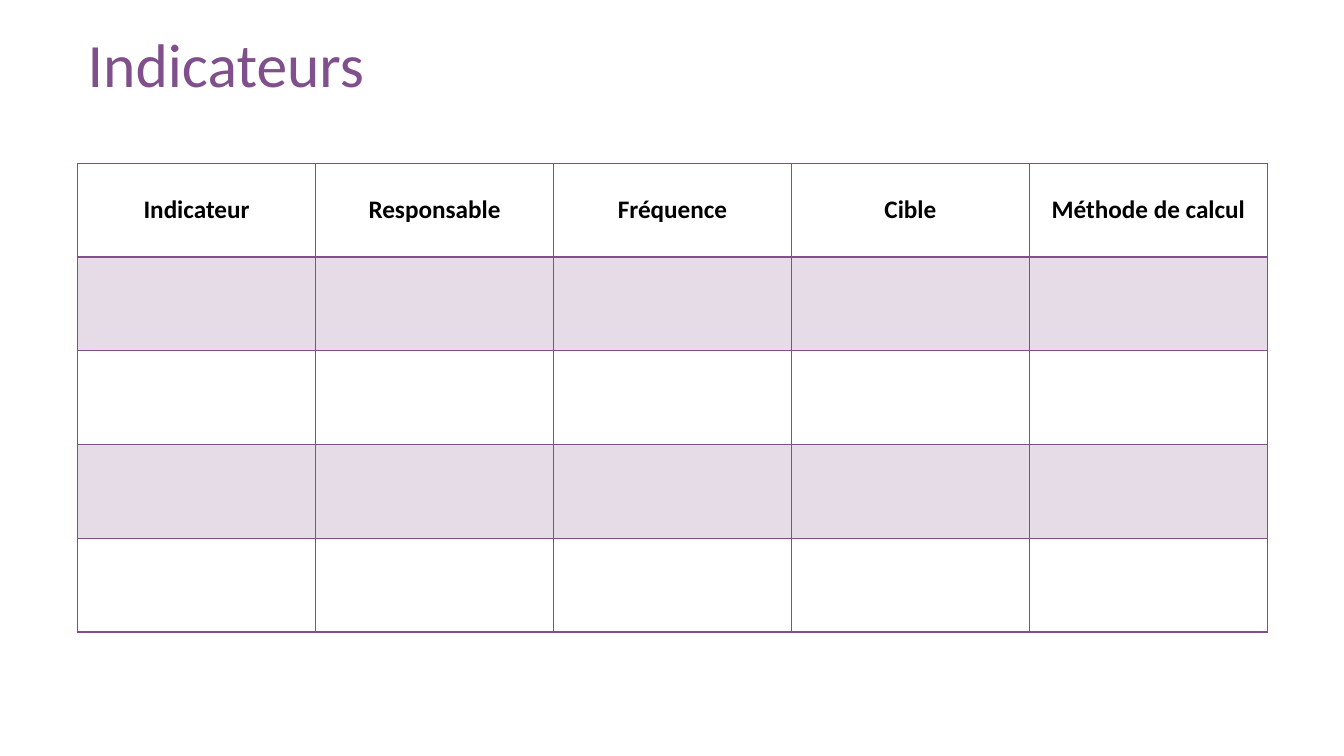
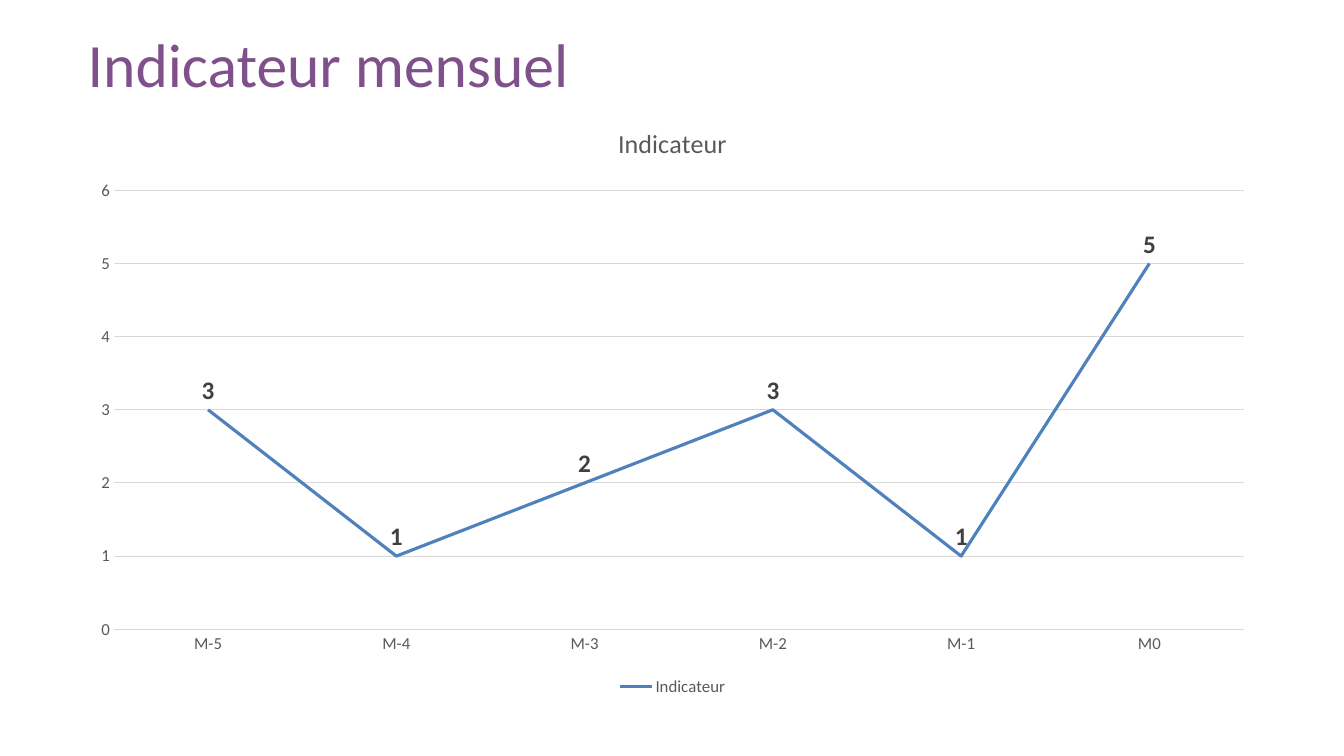
from lxml import etree
from pptx import Presentation
from pptx.chart.data import CategoryChartData
from pptx.dml.color import RGBColor
from pptx.enum.chart import XL_CHART_TYPE, XL_LABEL_POSITION, XL_LEGEND_POSITION, XL_MARKER_STYLE, XL_TICK_MARK
from pptx.enum.text import MSO_ANCHOR, PP_ALIGN
from pptx.oxml.ns import qn
from pptx.util import Pt

LINE = XL_CHART_TYPE.LINE
ABOVE = XL_LABEL_POSITION.ABOVE
BOTTOM = XL_LEGEND_POSITION.BOTTOM
NO_MARKER = XL_MARKER_STYLE.NONE
NO_TICK = XL_TICK_MARK.NONE
MIDDLE = MSO_ANCHOR.MIDDLE
LEFT, CENTER = PP_ALIGN.LEFT, PP_ALIGN.CENTER

PX = 9144
FONT = "Calibri"
COLORS = {
    "purple": "7F508B",
    "band": "E5DCE8",
    "black": "000000",
    "axis": "595959",
    "grid": "D9D9D9",
    "label": "404040",
    "series": "4F81BD",
}

SLIDE_SIZE = (1333, 750)
TITLE_BOX = (77, 18, 1180, 98)
CHART_BOX = (77, 102, 1180, 593)
TABLE_ORIGIN = (77, 162)
COLUMN_WIDTH, ROW_HEIGHT, ROW_COUNT = 236, 93, 5

TABLE_TITLE = "Indicateurs"
HEADERS = ["Indicateur", "Responsable", "Fréquence", "Cible", "Méthode de calcul"]
CHART_TITLE = "Indicateur mensuel"
SERIES_NAME = "Indicateur"
MONTHLY_VALUES = {"M-5": 3, "M-4": 1, "M-3": 2, "M-2": 3, "M-1": 1, "M0": 5}


def px(*lengths):
    return [length * PX for length in lengths]


def color(name):
    return RGBColor.from_string(COLORS[name])


def style_font(font, size, color_name, bold=False):
    font.name = FONT
    font.size = Pt(size)
    font.bold = bold
    font.color.rgb = color(color_name)


def style_line(line, color_name, width):
    line.color.rgb = color(color_name)
    line.width = Pt(width)


def add_titled_slide(prs, text):
    slide = prs.slides.add_slide(prs.slide_layouts[5])
    title = slide.shapes.title
    title.left, title.top, title.width, title.height = px(*TITLE_BOX)
    title.text_frame.text = text
    title.text_frame.vertical_anchor = MIDDLE
    paragraph = title.text_frame.paragraphs[0]
    paragraph.alignment = LEFT
    paragraph.line_spacing = 0.9
    style_font(paragraph.runs[0].font, 44, "purple")
    return slide


def set_borders(cell, widths):
    properties = cell._tc.get_or_add_tcPr()
    for position, (side, width) in enumerate(widths.items()):
        border = etree.Element(qn(f"a:ln{side}"), w=str(Pt(width)))
        fill = etree.SubElement(border, qn("a:solidFill"))
        etree.SubElement(fill, qn("a:srgbClr"), val=COLORS["purple"])
        properties.insert(position, border)


def add_indicator_table(slide):
    columns = len(HEADERS)
    size = px(columns * COLUMN_WIDTH, ROW_COUNT * ROW_HEIGHT)
    table = slide.shapes.add_table(ROW_COUNT, columns, *px(*TABLE_ORIGIN), *size).table
    table.first_row = table.horz_banding = False
    for row in range(ROW_COUNT):
        for column in range(columns):
            cell = table.cell(row, column)
            if row % 2:
                cell.fill.solid()
                cell.fill.fore_color.rgb = color("band")
            else:
                cell.fill.background()
            set_borders(cell, {"L": 1, "R": 1, "T": 2 if row == 1 else 1, "B": 2 if row == 0 else 1})
    for column, header in enumerate(HEADERS):
        cell = table.cell(0, column)
        cell.text_frame.text = header
        cell.vertical_anchor = MIDDLE
        paragraph = cell.text_frame.paragraphs[0]
        paragraph.alignment = CENTER
        style_font(paragraph.runs[0].font, 18, "black", True)


def add_monthly_chart(slide):
    data = CategoryChartData()
    data.categories = list(MONTHLY_VALUES)
    data.add_series(SERIES_NAME, list(MONTHLY_VALUES.values()))
    chart = slide.shapes.add_chart(LINE, *px(*CHART_BOX), data).chart
    style_font(chart.font, 10, "black")

    chart.has_title = True
    chart.chart_title.include_in_layout = False
    heading = chart.chart_title.text_frame
    heading.text = SERIES_NAME
    style_font(heading.paragraphs[0].runs[0].font, 18.6, "axis")

    chart.has_legend = True
    chart.legend.position = BOTTOM
    chart.legend.include_in_layout = False
    style_font(chart.legend.font, 12, "axis")

    months, scale = chart.category_axis, chart.value_axis
    for axis in (months, scale):
        axis.major_tick_mark = axis.minor_tick_mark = NO_TICK
        style_font(axis.tick_labels.font, 12, "axis")
    style_line(months.format.line, "grid", 0.75)
    scale.format.line.fill.background()
    scale.has_major_gridlines = True
    style_line(scale.major_gridlines.format.line, "grid", 0.75)
    scale.minimum_scale, scale.maximum_scale, scale.major_unit = 0, 6, 1

    plot = chart.plots[0]
    plot.vary_by_categories = False
    series = plot.series[0]
    series.smooth = False
    series.marker.style = NO_MARKER
    style_line(series.format.line, "series", 2.25)
    labels = series.data_labels
    labels.show_value = True
    labels.position = ABOVE
    style_font(labels.font, 18, "label", True)


def main():
    prs = Presentation()
    prs.slide_width, prs.slide_height = px(*SLIDE_SIZE)
    add_indicator_table(add_titled_slide(prs, TABLE_TITLE))
    add_monthly_chart(add_titled_slide(prs, CHART_TITLE))
    prs.save("out.pptx")


if __name__ == "__main__":
    main()
